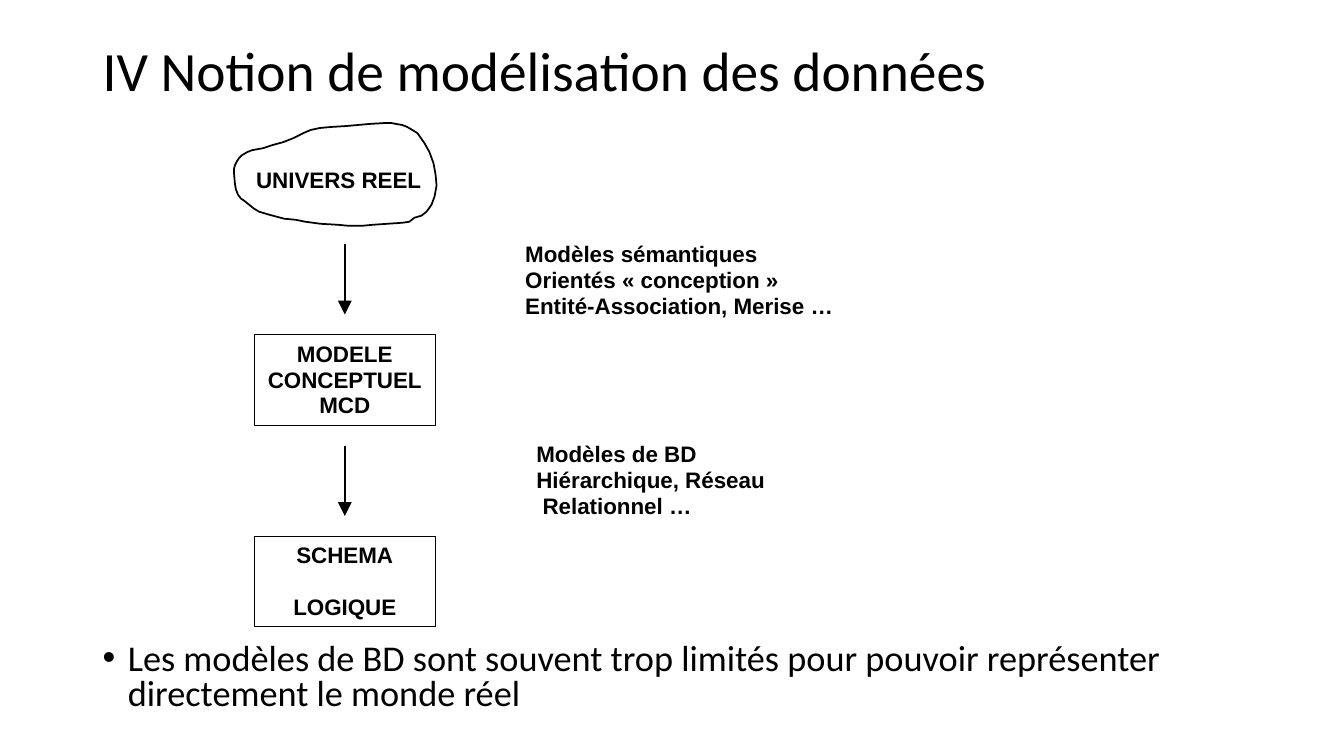
from lxml.etree import SubElement
from pptx import Presentation
from pptx.dml.color import RGBColor
from pptx.enum.shapes import MSO_CONNECTOR as Link, MSO_SHAPE as Preset
from pptx.enum.text import MSO_ANCHOR as Anchor, PP_ALIGN as Align
from pptx.oxml.ns import qn
from pptx.util import Pt

PX = 9144
BLACK = RGBColor(0, 0, 0)
LINE_PITCH = Pt(18.5)
AXIS = 342
BOX_LEFT, BOX_WIDTH, BOX_HEIGHT = 252, 180, 90
STEP = 200

CLOUD = [
    (261, 147), (250, 149), (245, 151), (240, 154), (237, 157), (235, 160),
    (233, 164), (232, 168), (232, 171), (233, 182), (234, 188), (236, 193),
    (239, 197), (242, 199), (247, 203), (252, 207), (257, 210), (267, 213),
    (282, 217), (293, 218), (303, 220), (318, 222), (335, 223), (346, 224),
    (359, 224), (370, 223), (384, 222), (399, 221), (406, 220), (411, 216),
    (418, 214), (423, 210), (426, 206), (428, 203), (431, 195), (433, 184),
    (432, 173), (430, 162), (426, 151), (421, 142), (414, 132), (409, 129),
    (404, 126), (399, 124), (393, 123), (388, 122), (382, 122), (366, 123),
    (344, 125), (328, 126), (317, 127), (308, 129), (301, 132), (291, 137),
    (281, 141), (270, 144),
]


class Page:
    """Draws the elements of one slide in a shared style."""

    def __init__(self, deck):
        self.slide = deck.slides.add_slide(deck.slide_layouts[6])
        self.shapes = self.slide.shapes

    def outline(self, shape, width):
        shape.shadow.inherit = False
        shape.fill.background()
        shape.line.color.rgb = BLACK
        shape.line.width = Pt(width)

    def set_text(self, shape, text, font, size, spacing, bold=False,
                 align=Align.LEFT, anchor=Anchor.TOP, inset=(0, 0)):
        frame = shape.text_frame
        frame.text = text
        frame.word_wrap = True
        frame.vertical_anchor = anchor
        frame.margin_left = frame.margin_right = inset[0] * PX
        frame.margin_top = frame.margin_bottom = inset[1] * PX
        for para in frame.paragraphs:
            para.alignment = align
            para.line_spacing = spacing
            for span in para.runs:
                span.font.name = font
                span.font.size = Pt(size)
                span.font.bold = bold
                span.font.color.rgb = BLACK
        return frame.paragraphs

    def textbox(self, left, top, width, height):
        return self.shapes.add_textbox(left * PX, top * PX, width * PX, height * PX)

    def title(self, text, left, top, width, height):
        box = self.textbox(left, top, width, height)
        self.set_text(box, text, "Calibri", 39.6, 0.9, anchor=Anchor.MIDDLE, inset=(10, 5))

    def bullet(self, text, left, top, width, height):
        box = self.textbox(left, top, width, height)
        para = self.set_text(box, text, "Calibri", 25.9, 0.8, inset=(10, 5))[0]
        props = para._p.get_or_add_pPr()
        props.set("marL", str(25 * PX))
        props.set("indent", str(-25 * PX))
        SubElement(props, qn("a:buFont")).set("typeface", "Arial")
        SubElement(props, qn("a:buChar")).set("char", "•")

    def label(self, text, left, top, width, height):
        box = self.textbox(left, top, width, height)
        self.set_text(box, text, "Arial", 16, LINE_PITCH, bold=True)

    def box(self, text, top, gap=0):
        box = self.shapes.add_shape(Preset.RECTANGLE, BOX_LEFT * PX, top * PX,
                                    BOX_WIDTH * PX, BOX_HEIGHT * PX)
        self.outline(box, 0.72)
        paras = self.set_text(box, text, "Arial", 16, LINE_PITCH, bold=True,
                              align=Align.CENTER, inset=(0, 6))
        for para in paras[1:]:
            para.space_before = gap

    def cloud(self, points):
        builder = self.shapes.build_freeform(*points[0], scale=PX)
        builder.add_line_segments(points[1:], close=True)
        self.outline(builder.convert_to_shape(), 1.25)

    def arrow(self, top, bottom):
        arrow = self.shapes.add_connector(Link.STRAIGHT, AXIS * PX, top * PX,
                                          AXIS * PX, bottom * PX)
        arrow.line.color.rgb = BLACK
        arrow.line.width = Pt(1.75)
        head = SubElement(arrow.line._get_or_add_ln(), qn("a:tailEnd"))
        for key, value in (("type", "triangle"), ("w", "lg"), ("len", "lg")):
            head.set(key, value)
        SubElement(arrow._element.spPr, qn("a:effectLst"))


def main():
    deck = Presentation()
    deck.slide_width, deck.slide_height = 1333 * PX, 750 * PX
    page = Page(deck)
    page.title("IV Notion de modélisation des données", 92, 40, 1150, 65)
    page.bullet("Les modèles de BD sont souvent trop limités pour pouvoir "
                "représenter directement le monde réel", 92, 634, 1150, 81)
    page.cloud(CLOUD)
    page.label("UNIVERS REEL", 254, 166, 178, 26)
    page.label("Modèles sémantiques\nOrientés « conception »\n"
               "Entité-Association, Merise …", 521, 239, 340, 77)
    page.label("Modèles de BD\nHiérarchique, Réseau\n Relationnel …",
               532, 438, 260, 77)
    steps = [("MODELE\nCONCEPTUEL\nMCD", 0), ("SCHEMA\nLOGIQUE", LINE_PITCH)]
    for index, (text, gap) in enumerate(steps):
        page.arrow(242 + index * STEP, 312 + index * STEP)
        page.box(text, 332 + index * STEP, gap)
    deck.save("out.pptx")


if __name__ == "__main__":
    main()
